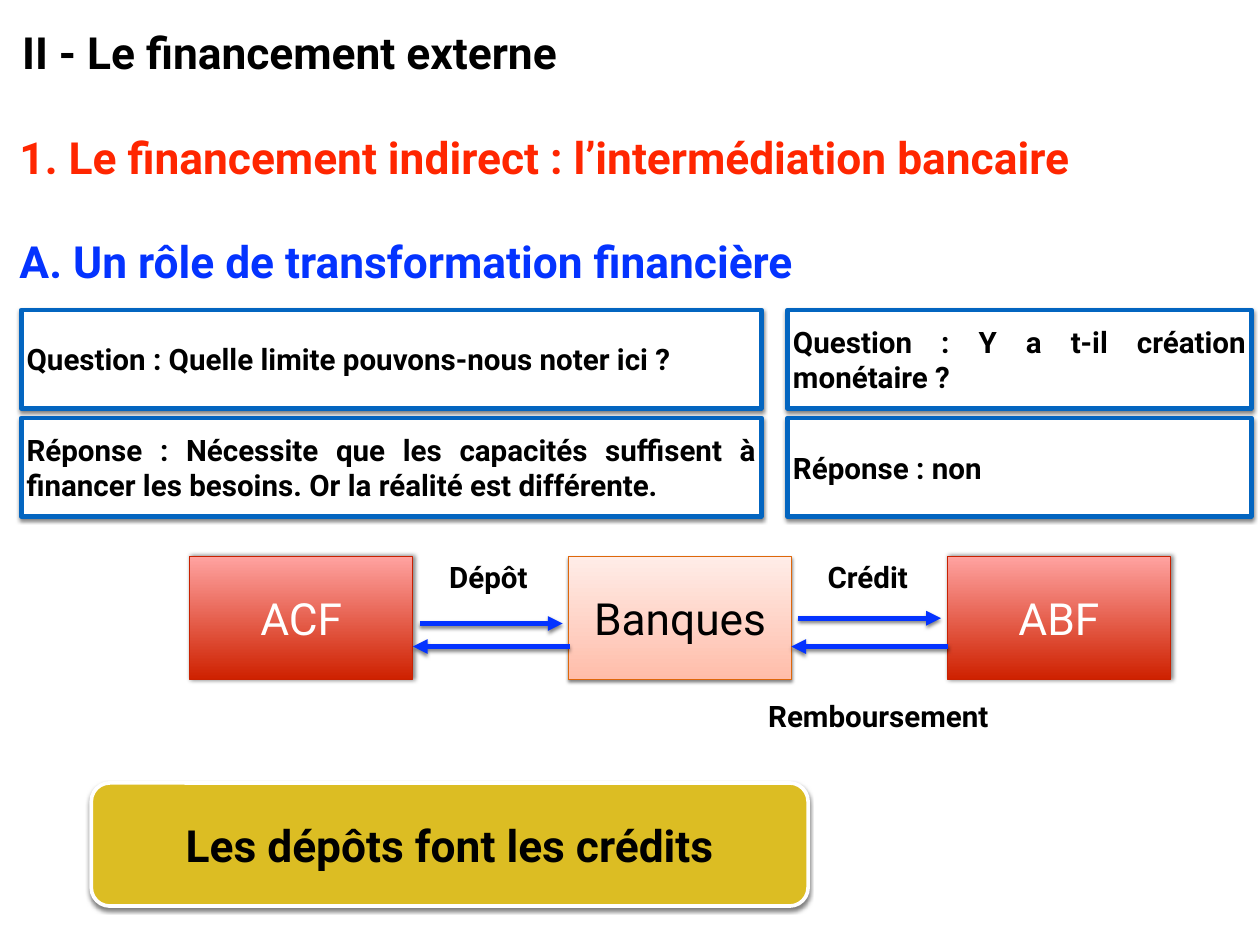
from lxml.etree import SubElement
from pptx import Presentation
from pptx.dml.color import RGBColor
from pptx.enum.shapes import MSO_CONNECTOR, MSO_SHAPE
from pptx.enum.text import MSO_ANCHOR, MSO_AUTO_SIZE, PP_ALIGN
from pptx.oxml.ns import qn
from pptx.util import Inches, Pt

color = RGBColor.from_string


def write_text(shape, text, size, hex_color, bold=True, align=PP_ALIGN.LEFT, wrap=True):
    frame = shape.text_frame
    frame.word_wrap = wrap
    frame.auto_size = MSO_AUTO_SIZE.NONE
    frame.vertical_anchor = MSO_ANCHOR.MIDDLE
    frame.margin_left = frame.margin_right = Inches(0.06)
    frame.margin_top = frame.margin_bottom = Inches(0.06)
    paragraph = frame.paragraphs[0]
    paragraph.alignment = align
    paragraph.line_spacing = 1.0
    run = paragraph.add_run()
    run.text = text
    run.font.name = "Roboto"
    run.font.size = Pt(size)
    run.font.bold = bold
    run.font.color.rgb = color(hex_color)


def add_shadow(shape, blur=3, distance=2, angle=90):
    effects = SubElement(shape.element.spPr, qn("a:effectLst"))
    shadow = SubElement(effects, qn("a:outerShdw"), blurRad=str(Pt(blur)),
                        dist=str(Pt(distance)), dir=str(angle * 60000), rotWithShape="0")
    tint = SubElement(shadow, qn("a:srgbClr"), val="000000")
    SubElement(tint, qn("a:alpha"), val="50000")


presentation = Presentation()
presentation.slide_width = Inches(14.22)
presentation.slide_height = Inches(10.67)
slide = presentation.slides.add_slide(presentation.slide_layouts[5])
shapes = slide.shapes

# Title
title = shapes.title
title.left, title.top = Inches(0.19), Inches(0.23)
title.width, title.height = Inches(6.43), Inches(0.71)
write_text(title, "II - Le financement externe", 36, "000000", wrap=False)

# Section headings and arrow labels
labels = [
    ("1. Le financement indirect : l’intermédiation bancaire", 0.16, 1.41, 13.07, 0.71, 36, "FF2600"),
    ("A. Un rôle de transformation financière", 0.16, 2.59, 9.38, 0.71, 36, "0433FF"),
    ("Dépôt", 5.01, 6.26, 1.07, 0.51, 24, "000000"),
    ("Crédit", 9.28, 6.26, 1.09, 0.51, 24, "000000"),
    ("Remboursement", 8.61, 7.82, 2.76, 0.51, 24, "000000"),
]
for text, left, top, width, height, size, hex_color in labels:
    box = shapes.add_textbox(Inches(left), Inches(top), Inches(width), Inches(height))
    write_text(box, text, size, hex_color, wrap=False)

# Questions above, answers below
columns = [
    (0.24, 8.35, "Question : Quelle limite pouvons-nous noter ici ?",
     "Réponse : Nécessite que les capacités suffisent à financer les besoins. "
     "Or la réalité est différente."),
    (8.89, 5.23, "Question : Y a t-il création monétaire ?", "Réponse : non"),
]
for left, width, *texts in columns:
    for row, text in enumerate(texts):
        box = shapes.add_shape(MSO_SHAPE.RECTANGLE, Inches(left), Inches(3.5 + 1.22 * row),
                               Inches(width), Inches(1.11))
        box.fill.solid()
        box.fill.fore_color.rgb = color("FFFFFF")
        box.line.color.rgb = color("0365C0")
        box.line.width = Pt(4)
        add_shadow(box)
        write_text(box, text, 24, "000000", align=PP_ALIGN.JUSTIFY)

# Agents and banks
red = ("CE2100", "FFA3A1", "C82101", "FFFFFF", (4, 1, 0))
peach = ("FFBDAA", "FFEDE8", "DE670B", "000000", (3, 2, 90))
for index, (text, style) in enumerate([("ACF", red), ("Banques", peach), ("ABF", red)]):
    bottom_color, top_color, line_color, text_color, shadow = style
    box = shapes.add_shape(MSO_SHAPE.RECTANGLE, Inches(2.14 + 4.275 * index), Inches(6.28),
                           Inches(2.52), Inches(1.39))
    box.fill.gradient()
    box.fill.gradient_angle = 90
    for stop, position, stop_color in zip(box.fill.gradient_stops, (0, 1), (bottom_color, top_color)):
        stop.position = position
        stop.color.rgb = color(stop_color)
    box.line.color.rgb = color(line_color)
    box.line.width = Pt(0.75)
    add_shadow(box, *shadow)
    write_text(box, text, 36, text_color, bold=False, align=PP_ALIGN.CENTER)

# Flows between them
for start, end, y in [(4.74, 6.35, 7.04), (9.01, 10.62, 6.98), (6.43, 4.66, 7.3), (10.7, 8.93, 7.3)]:
    arrow = shapes.add_connector(MSO_CONNECTOR.STRAIGHT, Inches(start), Inches(y), Inches(end), Inches(y))
    arrow.line.color.rgb = color("0433FF")
    arrow.line.width = Pt(4)
    SubElement(arrow.line._get_or_add_ln(), qn("a:tailEnd"), type="triangle")
    add_shadow(arrow)

# Conclusion
conclusion = shapes.add_shape(MSO_SHAPE.ROUNDED_RECTANGLE, Inches(1.03), Inches(8.84),
                              Inches(8.09), Inches(1.39))
conclusion.adjustments[0] = 0.15
conclusion.fill.solid()
conclusion.fill.fore_color.rgb = color("DCBD23")
conclusion.line.color.rgb = color("FFFFFF")
conclusion.line.width = Pt(3)
add_shadow(conclusion)
write_text(conclusion, "Les dépôts font les crédits", 36, "000000", align=PP_ALIGN.CENTER)

presentation.save("out.pptx")
